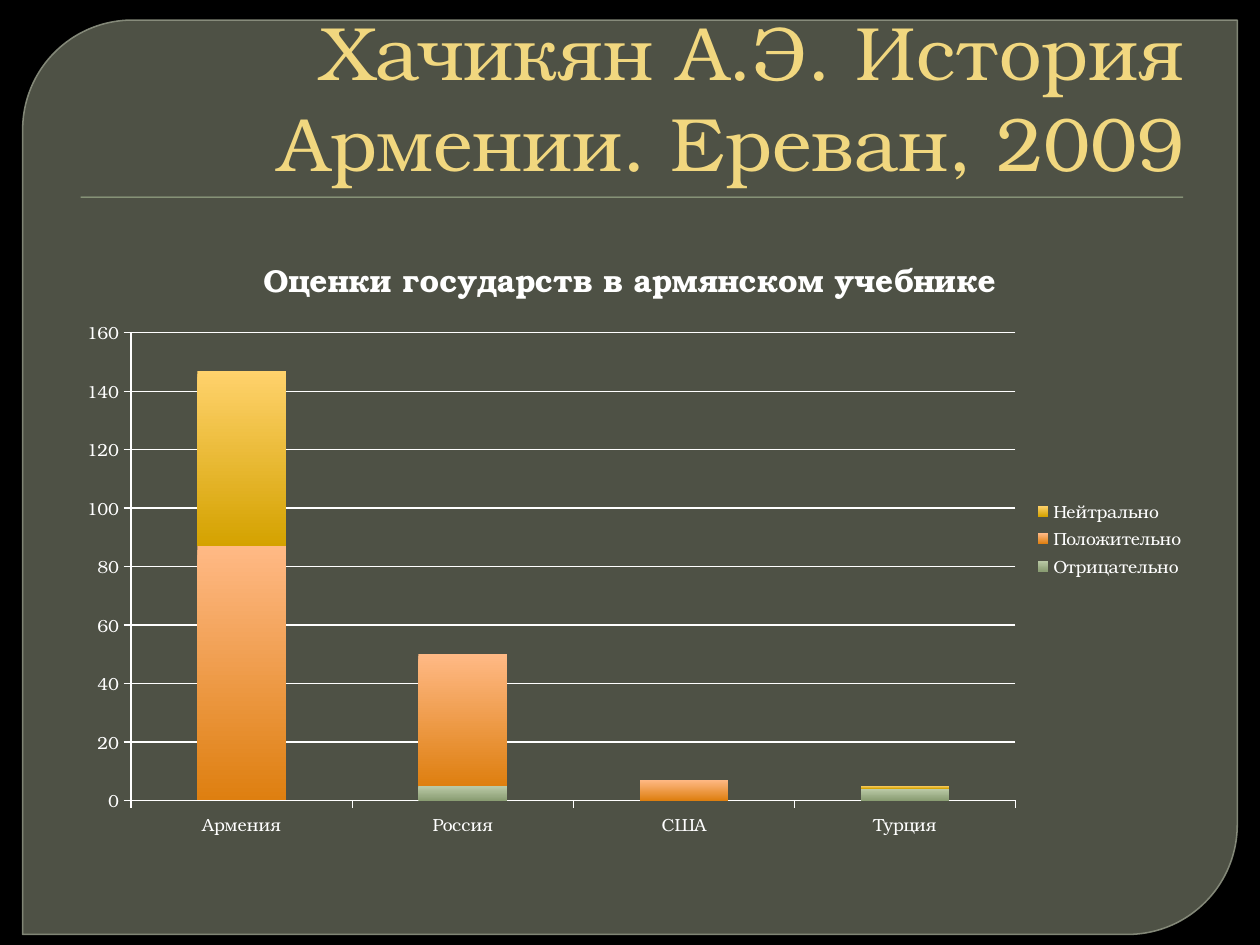
from dataclasses import dataclass
from typing import Optional

from lxml import etree
from pptx import Presentation
from pptx.chart.data import CategoryChartData
from pptx.dml.color import RGBColor
from pptx.enum.chart import XL_CHART_TYPE, XL_LEGEND_POSITION, XL_TICK_MARK
from pptx.enum.shapes import MSO_SHAPE
from pptx.enum.text import MSO_ANCHOR, MSO_AUTO_SIZE, PP_ALIGN
from pptx.oxml.ns import qn
from pptx.util import Pt

STACKED = XL_CHART_TYPE.COLUMN_STACKED
LEGEND_RIGHT = XL_LEGEND_POSITION.RIGHT
TICK_OUTSIDE = XL_TICK_MARK.OUTSIDE
DIAGONAL_ROUND = MSO_SHAPE.ROUND_2_DIAG_RECTANGLE
RECTANGLE = MSO_SHAPE.RECTANGLE
BOTTOM = MSO_ANCHOR.BOTTOM
NO_AUTOFIT = MSO_AUTO_SIZE.NONE
RIGHT = PP_ALIGN.RIGHT

FONT = "TeX Gyre Bonum"
COLORS = {
    "background": "000000",
    "panel": "787D6B",
    "panel_line": "8F9483",
    "rule": "A5B592",
    "title": "F1D77F",
    "chart": "FFFFFF",
}
CATEGORIES = ("Армения", "Россия", "США", "Турция")


@dataclass
class Box:
    left: float
    top: float
    width: float
    height: float

    def lengths(self):
        return Pt(self.left), Pt(self.top), Pt(self.width), Pt(self.height)


@dataclass
class Rating:
    name: str
    values: tuple[Optional[int], ...]
    light: str
    dark: str


RATINGS = (
    Rating("Отрицательно", (None, 5, None, 4), "BCCBA8", "8A9D73"),
    Rating("Положительно", (87, 45, 7, None), "FFB985", "DE7F10"),
    Rating("Нейтрально", (60, None, None, 1), "FFD26C", "D4A200"),
)


def rgb(name: str) -> RGBColor:
    return RGBColor.from_string(COLORS[name])


def set_alpha(fill_parent, percent: int) -> None:
    """Set the opacity of the solid fill that is a child of fill_parent."""
    color = fill_parent.find(qn("a:solidFill"))[0]
    etree.SubElement(color, qn("a:alpha")).set("val", str(percent * 1000))


def add_block(slide, kind, box: Box, color: str):
    sp = slide.shapes.add_shape(kind, *box.lengths())
    sp.shadow.inherit = False
    sp.fill.solid()
    sp.fill.fore_color.rgb = rgb(color)
    sp.line.fill.background()
    return sp


def add_panel(slide) -> None:
    sp = add_block(slide, DIAGONAL_ROUND, Box(12.96, 11.52, 694.08, 522.48), "panel")
    sp.adjustments[0] = 0.12
    sp.adjustments[1] = 0
    sp.line.color.rgb = rgb("panel_line")
    sp.line.width = Pt(0.87)
    properties = sp.element.spPr
    set_alpha(properties, 65)
    set_alpha(properties.find(qn("a:ln")), 88)


def add_title(slide, text: str) -> None:
    title = slide.shapes.title
    title.left, title.top, title.width, title.height = Box(36, 20.16, 648, 90).lengths()
    slide.shapes.element.append(title.element)  # in front of the panel
    tf = title.text_frame
    tf.word_wrap = True
    tf.auto_size = NO_AUTOFIT
    tf.vertical_anchor = BOTTOM
    p = tf.paragraphs[0]
    p.alignment = RIGHT
    r = p.add_run()
    r.text = text
    r.font.name = FONT
    r.font.size = Pt(43.2)
    r.font.color.rgb = rgb("title")


def style_axis(axis) -> None:
    axis.major_tick_mark = TICK_OUTSIDE
    axis.format.line.color.rgb = rgb("chart")
    axis.format.line.width = Pt(0.75)


def style_series(series, rating: Rating) -> None:
    series.invert_if_negative = False
    fill = series.format.fill
    fill.gradient()
    fill.gradient_angle = 270
    for stop, color in zip(fill.gradient_stops, (rating.light, rating.dark)):
        stop.color.rgb = RGBColor.from_string(color)


def set_plot_area(chart, **fractions: float) -> None:
    """Fix the inner plot area as fractions of the chart frame."""
    area = chart.element.find(".//" + qn("c:plotArea"))
    layout = area.find(qn("c:layout"))
    if layout is None:
        layout = etree.Element(qn("c:layout"))
        area.insert(0, layout)
    manual = etree.SubElement(layout, qn("c:manualLayout"))
    settings = {"layoutTarget": "inner", "xMode": "edge", "yMode": "edge", **fractions}
    for tag, value in settings.items():
        etree.SubElement(manual, qn(f"c:{tag}")).set("val", str(value))


def add_ratings_chart(slide, heading: str) -> None:
    data = CategoryChartData()
    data.categories = CATEGORIES
    for rating in RATINGS:
        data.add_series(rating.name, rating.values)
    box = Box(36, 129.6, 648, 356.4)
    chart = slide.shapes.add_chart(STACKED, *box.lengths(), data).chart
    chart.font.name = FONT
    chart.font.size = Pt(10)
    chart.font.color.rgb = rgb("chart")

    chart.has_title = True
    r = chart.chart_title.text_frame.paragraphs[0].add_run()
    r.text = heading
    r.font.name = FONT
    r.font.size = Pt(18)
    r.font.bold = True
    r.font.color.rgb = rgb("chart")

    chart.has_legend = True
    chart.legend.position = LEGEND_RIGHT
    chart.legend.include_in_layout = False

    plot = chart.plots[0]
    plot.gap_width = 150
    plot.overlap = 100
    plot.vary_by_categories = False
    for series, rating in zip(plot.series, RATINGS):
        style_series(series, rating)

    style_axis(chart.category_axis)
    axis = chart.value_axis
    style_axis(axis)
    axis.minimum_scale, axis.maximum_scale, axis.major_unit = 0, 160, 20
    axis.has_major_gridlines = True
    axis.major_gridlines.format.line.color.rgb = rgb("chart")
    axis.major_gridlines.format.line.width = Pt(0.75)
    set_plot_area(chart, x=0.06, y=0.17, w=0.78, h=0.75)


def main() -> None:
    prs = Presentation()
    prs.slide_width, prs.slide_height = Pt(720), Pt(540)
    s = prs.slides.add_slide(prs.slide_layouts[5])
    s.background.fill.solid()
    s.background.fill.fore_color.rgb = rgb("background")
    add_panel(s)
    add_block(s, RECTANGLE, Box(46.08, 112.3, 630, 0.72), "rule")
    add_title(s, "Хачикян А.Э. История Армении. Ереван, 2009")
    add_ratings_chart(s, "Оценки государств в армянском учебнике")
    prs.save("out.pptx")


if __name__ == "__main__":
    main()
